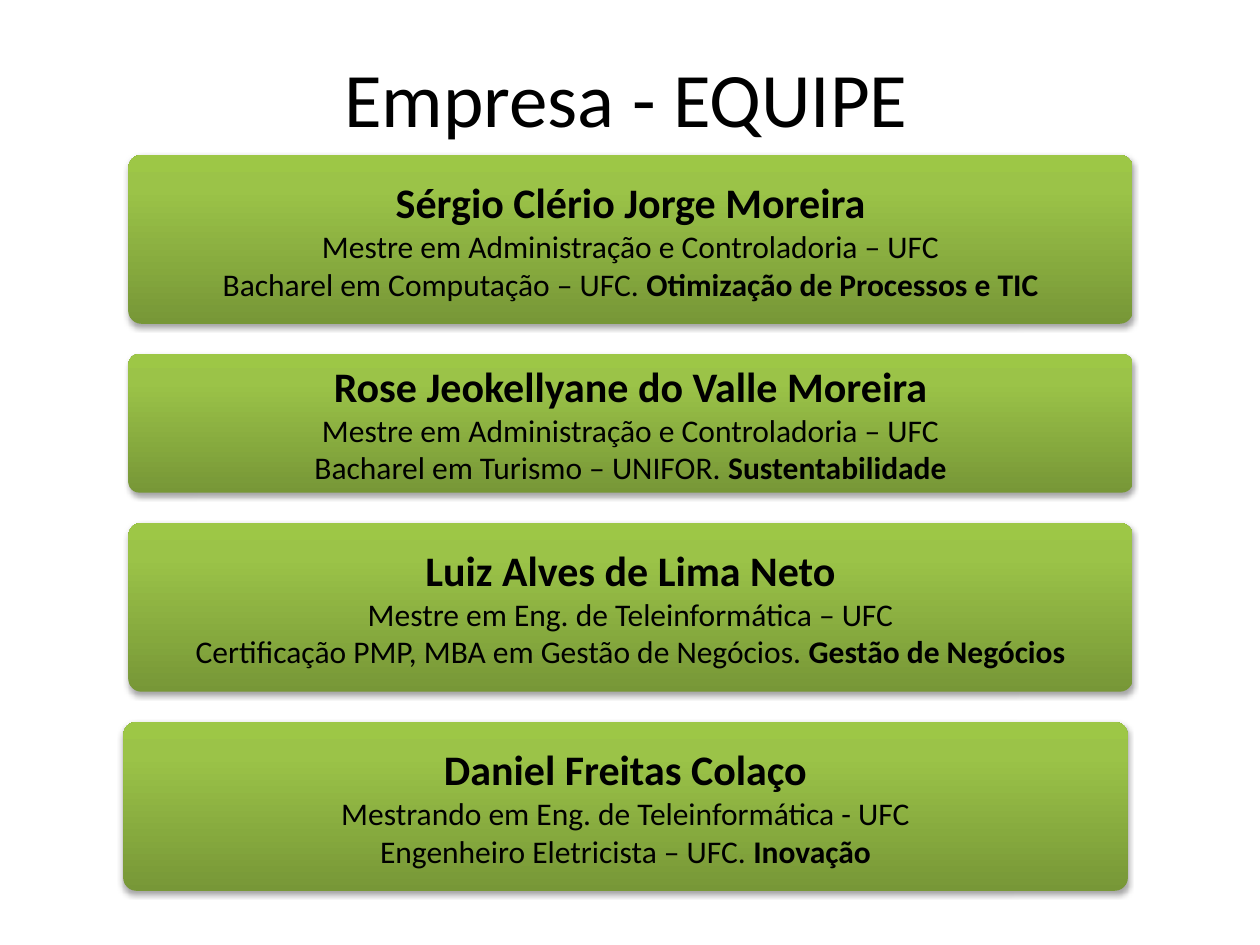
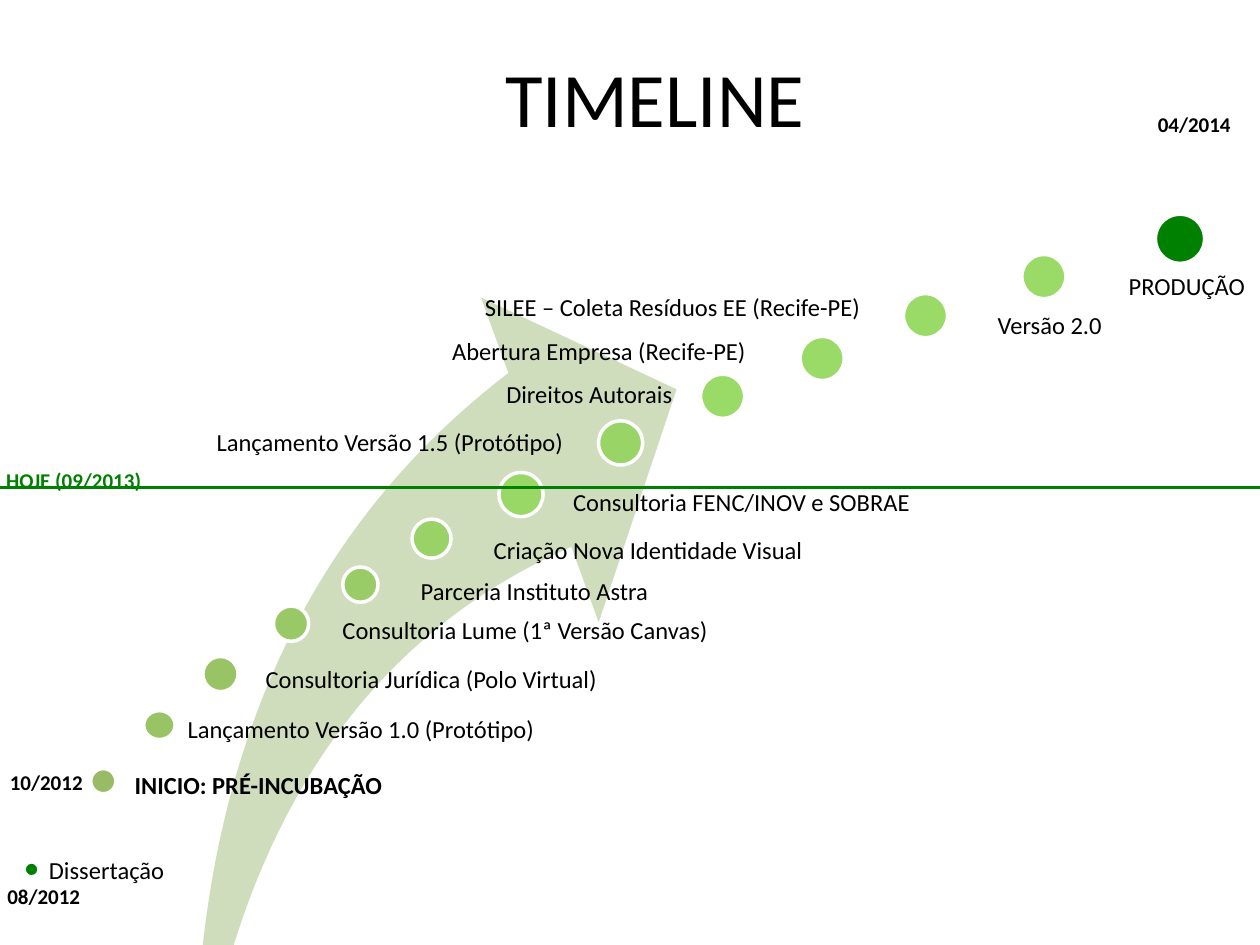
from dataclasses import dataclass

from pptx import Presentation
from pptx.dml.color import RGBColor
from pptx.enum.shapes import MSO_CONNECTOR, MSO_SHAPE
from pptx.enum.text import MSO_ANCHOR, MSO_AUTO_SIZE, PP_ALIGN
from pptx.oxml import parse_xml
from pptx.oxml.ns import nsdecls
from pptx.util import Inches, Pt


@dataclass(frozen=True)
class Theme:
    font: str = "Calibri"
    ink: str = "000000"
    paper: str = "FFFFFF"
    accent: str = "008000"
    arrow: str = "D0DDBC"
    card_stops: tuple = ((0, "779737"), (80, "9BC348"), (100, "9DC746"))
    title_size: int = 44
    name_size: int = 24
    detail_size: int = 18
    label_size: int = 14
    date_size: int = 12


@dataclass(frozen=True)
class Milestone:
    text: str
    label: tuple  # left, top, width
    dot: tuple  # left, top, width, height
    color: str
    bold: bool = False


def add_span(para, text, *, theme, size, color=None, bold=False):
    """Add formatted text to a paragraph."""
    span = para.add_run()
    span.text = text
    span.font.name = theme.font
    span.font.size = Pt(size)
    span.font.bold = bold
    span.font.color.rgb = RGBColor.from_string(color or theme.ink)


class PageBuilder:
    def __init__(self, deck, theme):
        self.deck = deck
        self.theme = theme
        self.page = None

    def start(self, title, left):
        """Open a title-only page and place its title."""
        self.page = self.deck.slides.add_slide(self.deck.slide_layouts[5])
        box = self.page.shapes.title
        box.left, box.top = Inches(left), Inches(0.14)
        box.width, box.height = Inches(7.18), Inches(1.25)
        box.text_frame.vertical_anchor = MSO_ANCHOR.MIDDLE
        para = box.text_frame.paragraphs[0]
        para.alignment = PP_ALIGN.CENTER
        add_span(para, title, theme=self.theme, size=self.theme.title_size)

    def shape(self, kind, left, top, width, height, fill=None):
        shape = self.page.shapes.add_shape(
            kind, Inches(left), Inches(top), Inches(width), Inches(height))
        if fill:
            shape.shadow.inherit = False
            shape.fill.solid()
            shape.fill.fore_color.rgb = RGBColor.from_string(fill)
        shape.line.fill.background()
        return shape

    def card(self, left, top, height, name, degree, role, specialty):
        """Add a team member's card with a gradient and a soft shadow."""
        card = self.shape(MSO_SHAPE.ROUNDED_RECTANGLE, left, top, 7.97, height)
        card.adjustments[0] = 0.076
        stops = "".join(
            f'<a:gs pos="{place * 1000}"><a:srgbClr val="{color}"/></a:gs>'
            for place, color in self.theme.card_stops)
        properties = card._element.spPr
        properties.insert(2, parse_xml(
            f'<a:gradFill {nsdecls("a")} rotWithShape="1"><a:gsLst>{stops}</a:gsLst>'
            '<a:lin ang="16200000" scaled="0"/></a:gradFill>'))
        properties.append(parse_xml(
            f'<a:effectLst {nsdecls("a")}><a:outerShdw blurRad="{Pt(3.1)}" '
            f'dist="{Pt(1.8)}" dir="5400000" rotWithShape="0"><a:srgbClr val="000000">'
            '<a:alpha val="35000"/></a:srgbClr></a:outerShdw></a:effectLst>'))

        frame = card.text_frame
        frame.word_wrap = False
        frame.vertical_anchor = MSO_ANCHOR.MIDDLE
        theme = self.theme
        lines = (
            ((name, theme.name_size, True),),
            ((degree, theme.detail_size, False),),
            ((role + " ", theme.detail_size, False),
             (specialty, theme.detail_size, True)),
        )
        for index, line in enumerate(lines):
            para = frame.add_paragraph() if index else frame.paragraphs[0]
            para.alignment = PP_ALIGN.CENTER
            for text, size, bold in line:
                add_span(para, text, theme=theme, size=size, bold=bold)

    def label(self, text, left, top, width, height=0.34, **style):
        box = self.page.shapes.add_textbox(
            Inches(left), Inches(top), Inches(width), Inches(height))
        box.text_frame.word_wrap = False
        box.text_frame.auto_size = MSO_AUTO_SIZE.SHAPE_TO_FIT_TEXT
        style.setdefault("size", self.theme.label_size)
        add_span(box.text_frame.paragraphs[0], text, theme=self.theme, **style)

    def date(self, text, left, top, width=0.79, color=None):
        self.label(text, left, top, width, 0.3,
                   size=self.theme.date_size, bold=True, color=color)

    def milestone(self, item):
        dot = self.shape(MSO_SHAPE.OVAL, *item.dot, fill=item.color)
        dot.line.color.rgb = RGBColor.from_string(self.theme.paper)
        dot.line.width = Pt(2)
        self.label(item.text, *item.label, bold=item.bold)

    def swoosh(self, left, top, width, height, rotation):
        arrow = self.shape(MSO_SHAPE.SWOOSH_ARROW, left, top, width, height,
                           fill=self.theme.arrow)
        arrow.adjustments[0] = arrow.adjustments[1] = 0.25
        arrow.rotation = rotation

    def rule(self, start, end, top):
        line = self.page.shapes.add_connector(
            MSO_CONNECTOR.STRAIGHT, Inches(start), Inches(top), Inches(end), Inches(top))
        line.line.color.rgb = RGBColor.from_string(self.theme.accent)
        line.line.width = Pt(1.5)
        line._element.spPr.append(parse_xml(f'<a:effectLst {nsdecls("a")}/>'))


# Team: left, height, name, degree, role, specialty
TEAM = (
    (1.02, 1.34, "Sérgio Clério Jorge Moreira",
     "Mestre em Administração e Controladoria – UFC",
     "Bacharel em Computação – UFC.", "Otimização de Processos e TIC"),
    (1.02, 1.1, "Rose Jeokellyane do Valle Moreira",
     "Mestre em Administração e Controladoria – UFC",
     "Bacharel em Turismo – UNIFOR.", "Sustentabilidade"),
    (1.02, 1.34, "Luiz Alves de Lima Neto",
     "Mestre em Eng. de Teleinformática – UFC",
     "Certificação PMP, MBA em Gestão de Negócios.", "Gestão de Negócios"),
    (0.98, 1.34, "Daniel Freitas Colaço",
     "Mestrando em Eng. de Teleinformática - UFC",
     "Engenheiro Eletricista – UFC.", "Inovação"),
)

# Milestones from the first to the last
MILESTONES = (
    Milestone("Dissertação", (0.29, 6.74, 1.13), (0.19, 6.84, 0.12, 0.12), Theme.accent),
    Milestone("INICIO: PRÉ-INCUBAÇÃO", (0.97, 6.06, 2.19),
              (0.72, 6.1, 0.2, 0.2), "99BB66", bold=True),
    Milestone("Lançamento Versão 1.0 (Protótipo)", (1.39, 5.62, 2.98),
              (1.14, 5.64, 0.25, 0.23), "99C466"),
    Milestone("Consultoria Jurídica (Polo Virtual)", (2.01, 5.22, 2.92),
              (1.61, 5.21, 0.28, 0.28), "99C466"),
    Milestone("Consultoria Lume (1ª Versão Canvas)", (2.62, 4.83, 3.16),
              (2.17, 4.81, 0.28, 0.28), "99C966"),
    Milestone("Parceria Instituto Astra", (3.24, 4.52, 2.06),
              (2.72, 4.5, 0.28, 0.28), "99CC66"),
    Milestone("Criação Nova Identidade Visual", (3.82, 4.2, 2.68),
              (3.27, 4.12, 0.31, 0.31), "99D266"),
    Milestone("Consultoria FENC/INOV e SOBRAE", (4.45, 3.82, 3.0),
              (3.96, 3.75, 0.35, 0.35), "99D866"),
    Milestone("Lançamento Versão 1.5 (Protótipo)", (1.62, 3.34, 2.98),
              (4.75, 3.34, 0.35, 0.35), "99D566"),
    Milestone("Direitos Autorais", (3.92, 2.96, 1.53), (5.56, 2.97, 0.35, 0.35), "99DB66"),
    Milestone("Abertura Empresa (Recife-PE)", (3.49, 2.62, 2.55),
              (6.35, 2.67, 0.35, 0.35), "99DB66"),
    Milestone("SILEE – Coleta Resíduos EE (Recife-PE)", (3.75, 2.27, 3.4),
              (7.17, 2.33, 0.35, 0.35), "99DB66"),
    Milestone("Versão 2.0", (7.82, 2.41, 1.04), (8.11, 2.02, 0.35, 0.35), "99DB66"),
    Milestone("PRODUÇÃO", (8.86, 2.1, 1.13), (9.17, 1.7, 0.39, 0.39), Theme.accent),
)


def build_team(builder):
    builder.start("Empresa - EQUIPE", left=1.38)
    top, gap = 1.23, 0.24
    for left, height, *texts in TEAM:
        builder.card(left, top, height, *texts)
        top += height + gap


def build_timeline(builder):
    builder.start("TIMELINE", left=1.61)
    builder.swoosh(0.8, 2.56, 5.07, 5.83, rotation=346.5)
    for item in MILESTONES:
        builder.milestone(item)

    # Dates and the line that marks today
    builder.date("08/2012", -0.04, 6.96)
    builder.date("10/2012", -0.02, 6.06)
    builder.date("04/2014", 9.09, 0.84)
    builder.date("HOJE (09/2013)", -0.05, 3.66, width=1.29, color=builder.theme.accent)
    builder.rule(-0.2, 10.28, 3.87)


def main():
    deck = Presentation()
    deck.slide_width, deck.slide_height = Inches(10), Inches(7.5)
    builder = PageBuilder(deck, Theme())
    build_team(builder)
    build_timeline(builder)
    deck.save("out.pptx")


if __name__ == "__main__":
    main()
